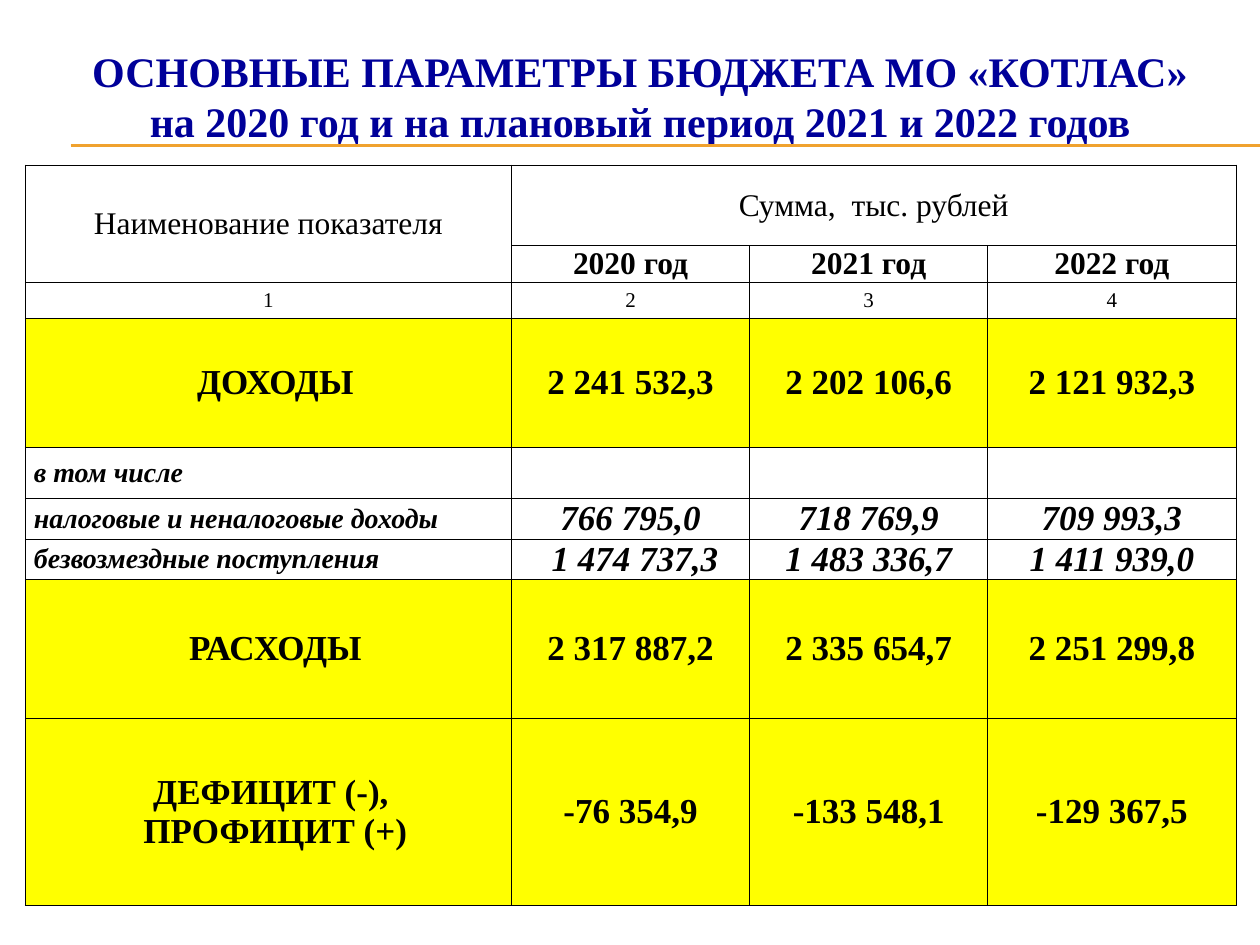
"""Builds a slide with the main budget parameters for 2020 to 2022."""
from lxml import etree
from pptx import Presentation
from pptx.dml.color import RGBColor
from pptx.enum.shapes import MSO_CONNECTOR
from pptx.enum.text import MSO_ANCHOR, MSO_AUTO_SIZE, PP_ALIGN
from pptx.oxml import parse_xml
from pptx.oxml.ns import nsdecls, qn
from pptx.util import Inches, Pt

FONT = "Times New Roman"
CENTER, LEFT = PP_ALIGN.CENTER, PP_ALIGN.LEFT
MIDDLE = MSO_ANCHOR.MIDDLE
NO_AUTOFIT = MSO_AUTO_SIZE.NONE
STRAIGHT = MSO_CONNECTOR.STRAIGHT
BLACK, YELLOW, NAVY, ORANGE = "000000", "FFFF00", "000099", "F0A22E"

COLUMN_WIDTHS = [3.86, 1.89, 1.89, 1.97]
ROWS = [
    (0.64, "header", ["Наименование показателя", "Сумма,  тыс. рублей", "", ""]),
    (0.29, "years", ["", "2020 год", "2021 год", "2022 год"]),
    (0.29, "numbers", ["1", "2", "3", "4"]),
    (1.02, "total", ["ДОХОДЫ", "2 241 532,3", "2 202 106,6", "2 121 932,3"]),
    (0.41, "detail", ["в том числе", "", "", ""]),
    (0.32, "detail", ["налоговые и неналоговые доходы", "766 795,0", "718 769,9", "709 993,3"]),
    (0.32, "detail", ["безвозмездные поступления", " 1 474 737,3", "1 483 336,7", "1 411 939,0"]),
    (1.1, "total", ["РАСХОДЫ", "2 317 887,2", "2 335 654,7", "2 251 299,8"]),
    (1.49, "total", ["ДЕФИЦИТ (-), \nПРОФИЦИТ (+)", "-76 354,9", "-133 548,1", "-129 367,5"]),
]
STYLES = {
    "header": (18, False, False),
    "years": (18, True, False),
    "numbers": (12, False, False),
    "total": (20, True, False),
    "detail": (20, True, True),
}


def color(value):
    return RGBColor.from_string(value)


def format_text(text_frame, size, bold, italic, value, alignment):
    for paragraph in text_frame.paragraphs:
        paragraph.alignment = alignment
        font = paragraph.font
        font.name, font.size = FONT, Pt(size)
        font.bold, font.italic = bold, italic
        font.color.rgb = color(value)


presentation = Presentation()
presentation.slide_width, presentation.slide_height = Inches(10), Inches(7.5)
slide = presentation.slides.add_slide(presentation.slide_layouts[5])

title = slide.shapes.title
title.left, title.top = Inches(0.33), Inches(0.21)
title.width, title.height = Inches(9.5), Inches(1.1)
title.text_frame.text = (
    "ОСНОВНЫЕ ПАРАМЕТРЫ БЮДЖЕТА МО «КОТЛАС»\v"
    "на 2020 год и на плановый период 2021 и 2022 годов"
)
title.text_frame.auto_size = NO_AUTOFIT
title.text_frame.vertical_anchor = MIDDLE
format_text(title.text_frame, 24, True, False, NAVY, CENTER)

for line_top in (1.15, 1.16):
    rule = slide.shapes.add_connector(
        STRAIGHT, Inches(0.56), Inches(line_top), Inches(10), Inches(line_top)
    )
    rule.line.color.rgb = color(ORANGE)
    rule.line.width = Pt(0.75)
    etree.SubElement(rule.element.spPr, qn("a:effectLst"))

table = slide.shapes.add_table(
    len(ROWS), len(COLUMN_WIDTHS), Inches(0.2), Inches(1.31),
    Inches(sum(COLUMN_WIDTHS)), Inches(sum(row[0] for row in ROWS)),
).table
table.first_row = table.horz_banding = False
for column, width in zip(table.columns, COLUMN_WIDTHS):
    column.width = Inches(width)

for row, (height, style, texts) in zip(table.rows, ROWS):
    row.height = Inches(height)
    size, bold, italic = STYLES[style]
    for index, (cell, text) in enumerate(zip(row.cells, texts)):
        is_label = index == 0
        is_detail_label = is_label and style == "detail"
        cell.text = text
        cell.vertical_anchor = MIDDLE
        cell.margin_left = cell.margin_right = Inches(0.01)
        cell.margin_top = cell.margin_bottom = 0
        if is_detail_label:
            cell.margin_left = cell.margin_right = Inches(0.07)
        elif is_label and style == "total":
            cell.margin_left = Inches(0.12)
        format_text(
            cell.text_frame, 16 if is_detail_label else size, bold, italic,
            BLACK, LEFT if is_detail_label else CENTER,
        )
        if style == "total":
            cell.fill.solid()
            cell.fill.fore_color.rgb = color(YELLOW)
        else:
            cell.fill.background()
        properties = cell._tc.get_or_add_tcPr()
        for position, side in enumerate(("lnL", "lnR", "lnT", "lnB")):
            properties.insert(position, parse_xml(
                f'<a:{side} {nsdecls("a")} w="{Pt(0.5)}"><a:solidFill>'
                f'<a:srgbClr val="{BLACK}"/></a:solidFill></a:{side}>'
            ))

table.cell(0, 0).merge(table.cell(1, 0))
table.cell(0, 1).merge(table.cell(0, 3))

presentation.save("out.pptx")
